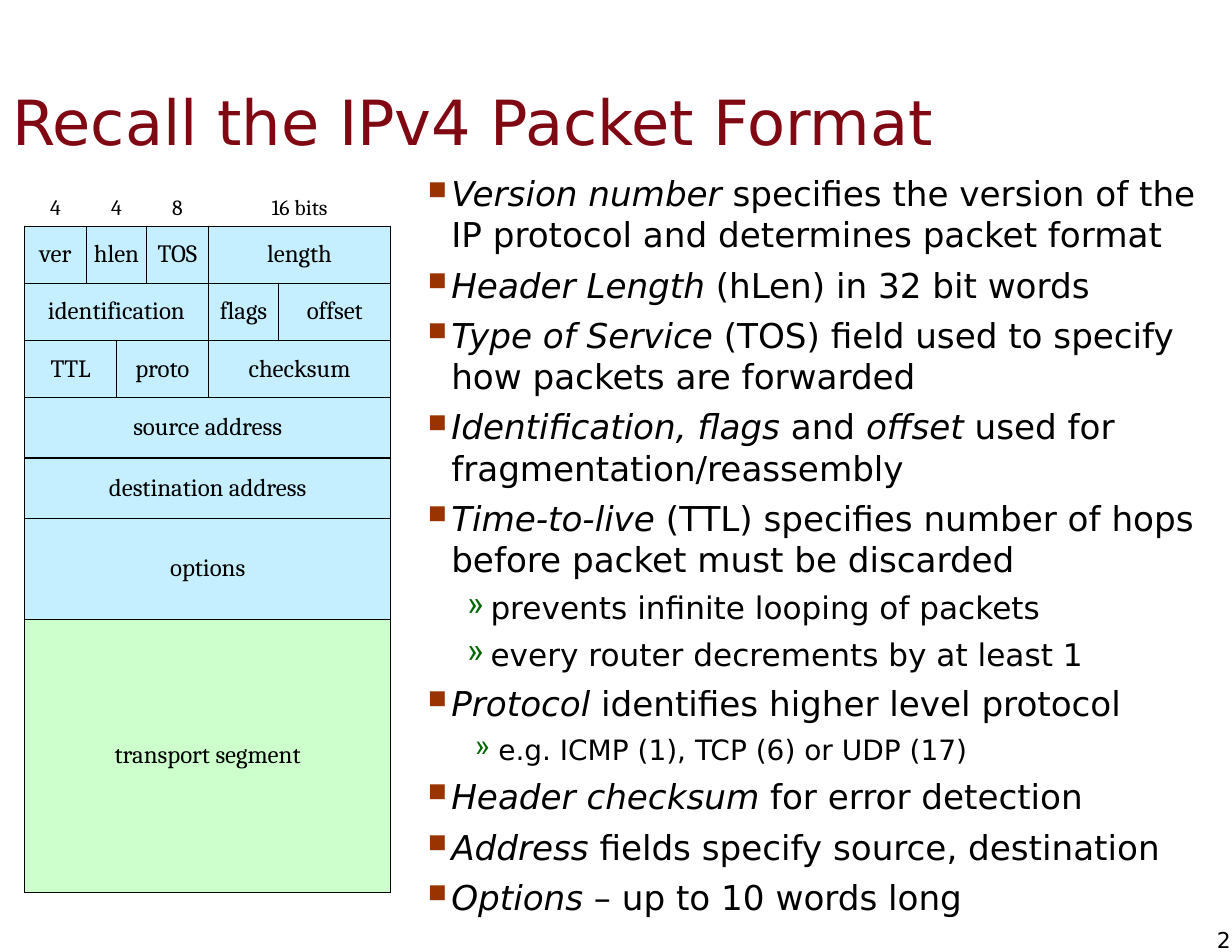
import pptx
import pptx.util
import pptx.dml.color
import pptx.enum.text
import pptx.oxml
import pptx.oxml.ns
from lxml import etree

Inches, Pt = pptx.util.Inches, pptx.util.Pt
RGBColor = pptx.dml.color.RGBColor
ANCHOR = pptx.enum.text.MSO_ANCHOR
ALIGN = pptx.enum.text.PP_ALIGN
qn = pptx.oxml.ns.qn

BLACK = RGBColor(0, 0, 0)
MAROON = RGBColor(0x7F, 0x08, 0x13)
RUST = RGBColor(0x99, 0x33, 0x00)
GREEN = RGBColor(0x00, 0x66, 0x00)
HEADER_BLUE = RGBColor(0xC5, 0xEE, 0xFF)
PAYLOAD_GREEN = RGBColor(0xCC, 0xFF, 0xCC)
SANS, SERIF = "DejaVu Sans", "Cambria"

COLUMN_WIDTHS = [0.55, 0.27, 0.27, 0.55, 0.63, 1]
ROW_HEIGHTS = [0.51, 0.51, 0.51, 0.51, 0.54, 0.54, 0.9, 2.44]
# Each row lists its fields as (label, columns spanned)
PACKET_ROWS = [
    [("4", 1), ("4", 2), ("8", 1), ("16 bits", 2)],
    [("ver", 1), ("hlen", 2), ("TOS", 1), ("length", 2)],
    [("identification", 4), ("flags", 1), ("offset", 1)],
    [("TTL", 2), ("proto", 2), ("checksum", 2)],
    [("source address", 6)],
    [("destination address", 6)],
    [("options", 6)],
    [("transport segment", 6)],
]

# (indent in inches, text size, text); asterisks enclose italics
NOTES = [
    (0.21, 22, "*Version number* specifies the version of the IP protocol "
               "and determines packet format"),
    (0.21, 22, "*Header Length *(hLen) in 32 bit words"),
    (0.21, 22, "*Type of Service* (TOS) field used to specify how packets are forwarded"),
    (0.21, 22, "*Identification, flags* and *offset* used for fragmentation/reassembly"),
    (0.21, 22, "*Time-to-live* (TTL) specifies number of hops before packet "
               "must be discarded"),
    (0.56, 20, "prevents infinite looping of packets"),
    (0.56, 20, "every router decrements by at least 1"),
    (0.21, 22, "*Protocol *identifies higher level protocol"),
    (0.63, 18, "e.g. ICMP (1), TCP (6) or UDP (17)"),
    (0.21, 22, "*Header checksum* for error detection"),
    (0.21, 22, "*Address* fields specify source, destination"),
    (0.21, 22, "*Options *– up to 10 words long"),
]


def set_font(paragraph, name, size, color):
    paragraph.font.name = name
    paragraph.font.size = Pt(size)
    paragraph.font.color.rgb = color


def set_margins(item, left, top, right, bottom):
    item.margin_left, item.margin_top = Inches(left), Inches(top)
    item.margin_right, item.margin_bottom = Inches(right), Inches(bottom)


def add_bullet(paragraph, indent, symbol, color, percent):
    properties = paragraph._p.get_or_add_pPr()
    properties.set("marL", str(Inches(indent)))
    properties.set("indent", str(Inches(-0.21)))
    bullet_color = etree.SubElement(properties, qn("a:buClr"))
    etree.SubElement(bullet_color, qn("a:srgbClr"), val=str(color))
    etree.SubElement(properties, qn("a:buSzPct"), val=str(percent * 1000))
    etree.SubElement(properties, qn("a:buChar"), char=symbol)


def set_borders(cell, visible_sides):
    properties = cell._tc.get_or_add_tcPr()
    for side in "LRTB":
        line = etree.SubElement(properties, qn("a:ln" + side), w=str(Pt(1)))
        if side in visible_sides:
            fill = etree.SubElement(line, qn("a:solidFill"))
            etree.SubElement(fill, qn("a:srgbClr"), val=str(BLACK))
        else:
            etree.SubElement(line, qn("a:noFill"))


def add_title(slide, left, top, width, height):
    title = slide.shapes.title
    title.left, title.top = Inches(left), Inches(top)
    title.width, title.height = Inches(width), Inches(height)
    frame = title.text_frame
    frame.text = "Recall the IPv4 Packet Format"
    frame.auto_size = pptx.enum.text.MSO_AUTO_SIZE.NONE
    frame.vertical_anchor = ANCHOR.MIDDLE
    set_margins(frame, 0.11, 0.06, 0.11, 0.06)
    heading = frame.paragraphs[0]
    heading.alignment = ALIGN.LEFT
    set_font(heading, SANS, 40, MAROON)


def add_notes(slide, left, top, width, height):
    box = slide.shapes.add_textbox(Inches(left), Inches(top), Inches(width), Inches(height))
    frame = box.text_frame
    frame.word_wrap = True
    set_margins(frame, 0.11, 0.06, 0.11, 0.06)
    for index, (indent, size, text) in enumerate(NOTES):
        note = frame.add_paragraph() if index else frame.paragraphs[0]
        if size == 22:
            add_bullet(note, indent, "■", RUST, 75)
        else:
            note.level = 1
            add_bullet(note, indent, "»", GREEN, 100)
        note.space_before = Pt(6 if index else 0)
        set_font(note, SANS, size, BLACK)
        for part, words in enumerate(text.split("*")):
            if words:
                run = note.add_run()
                run.text = words
                run.font.italic = part % 2 == 1


def add_packet_table(slide, left, top):
    table = slide.shapes.add_table(
        len(ROW_HEIGHTS), len(COLUMN_WIDTHS), Inches(left), Inches(top),
        Inches(sum(COLUMN_WIDTHS)), Inches(sum(ROW_HEIGHTS))).table
    table.first_row = table.horz_banding = False
    for column, width in zip(table.columns, COLUMN_WIDTHS):
        column.width = Inches(width)
    for row, height in zip(table.rows, ROW_HEIGHTS):
        row.height = Inches(height)

    last_row = len(PACKET_ROWS) - 1
    for row, fields in enumerate(PACKET_ROWS):
        is_bit_row = row == 0
        # Borders and fill of the whole row
        for column in range(len(COLUMN_WIDTHS)):
            cell = table.cell(row, column)
            set_borders(cell, "B" if is_bit_row else "LRTB")
            if is_bit_row:
                cell.fill.background()
            else:
                cell.fill.solid()
                cell.fill.fore_color.rgb = PAYLOAD_GREEN if row == last_row else HEADER_BLUE
        # Fields of the row
        column = 0
        for label, span in fields:
            cell = table.cell(row, column)
            if span > 1:
                cell.merge(table.cell(row, column + span - 1))
            cell.text = label
            cell.vertical_anchor = ANCHOR.BOTTOM if is_bit_row else ANCHOR.MIDDLE
            set_margins(cell, 0, 0, 0, 0.05 if is_bit_row else 0)
            paragraph = cell.text_frame.paragraphs[0]
            paragraph.alignment = ALIGN.CENTER
            set_font(paragraph, SERIF, 14 if is_bit_row else 16, BLACK)
            column += span


def add_page_number(slide, left, top, width, height):
    box = slide.shapes.add_textbox(Inches(left), Inches(top), Inches(width), Inches(height))
    frame = box.text_frame
    frame.word_wrap = False
    frame.vertical_anchor = ANCHOR.MIDDLE
    set_margins(frame, 0, 0, 0, 0)
    frame.text = "2"
    number = frame.paragraphs[0]
    number.alignment = ALIGN.RIGHT
    set_font(number, SANS, 14, BLACK)


def main():
    presentation = pptx.Presentation()
    presentation.slide_width, presentation.slide_height = Inches(11), Inches(8.5)
    slide = presentation.slides.add_slide(presentation.slide_layouts[5])
    add_title(slide, 0, 0.75, 11, 0.66)
    add_notes(slide, 3.71, 1.48, 7.28, 7.02)
    add_packet_table(slide, 0.22, 1.51)
    add_page_number(slide, 10.86, 8.27, 0.13, 0.24)
    presentation.save("out.pptx")


if __name__ == "__main__":
    main()
